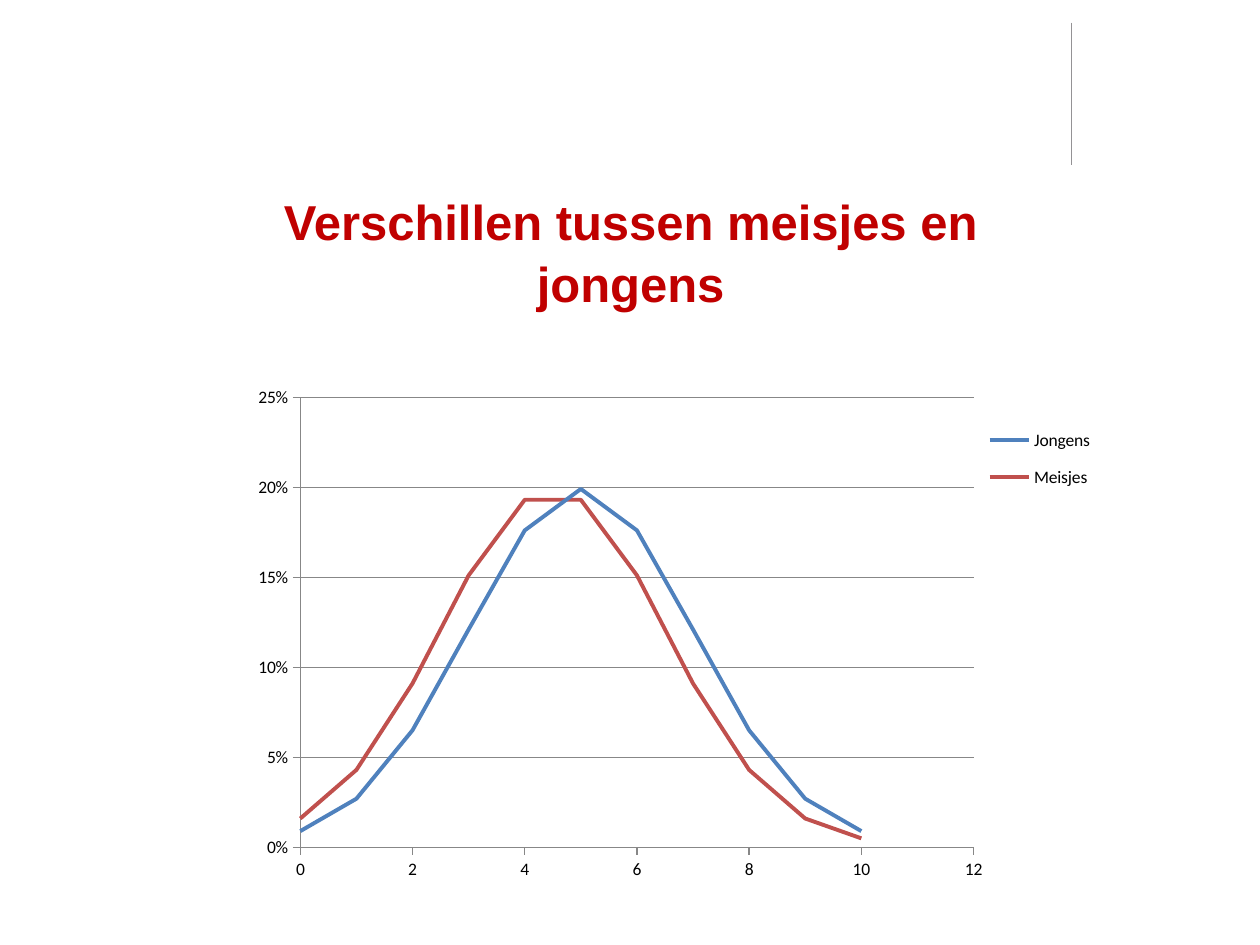
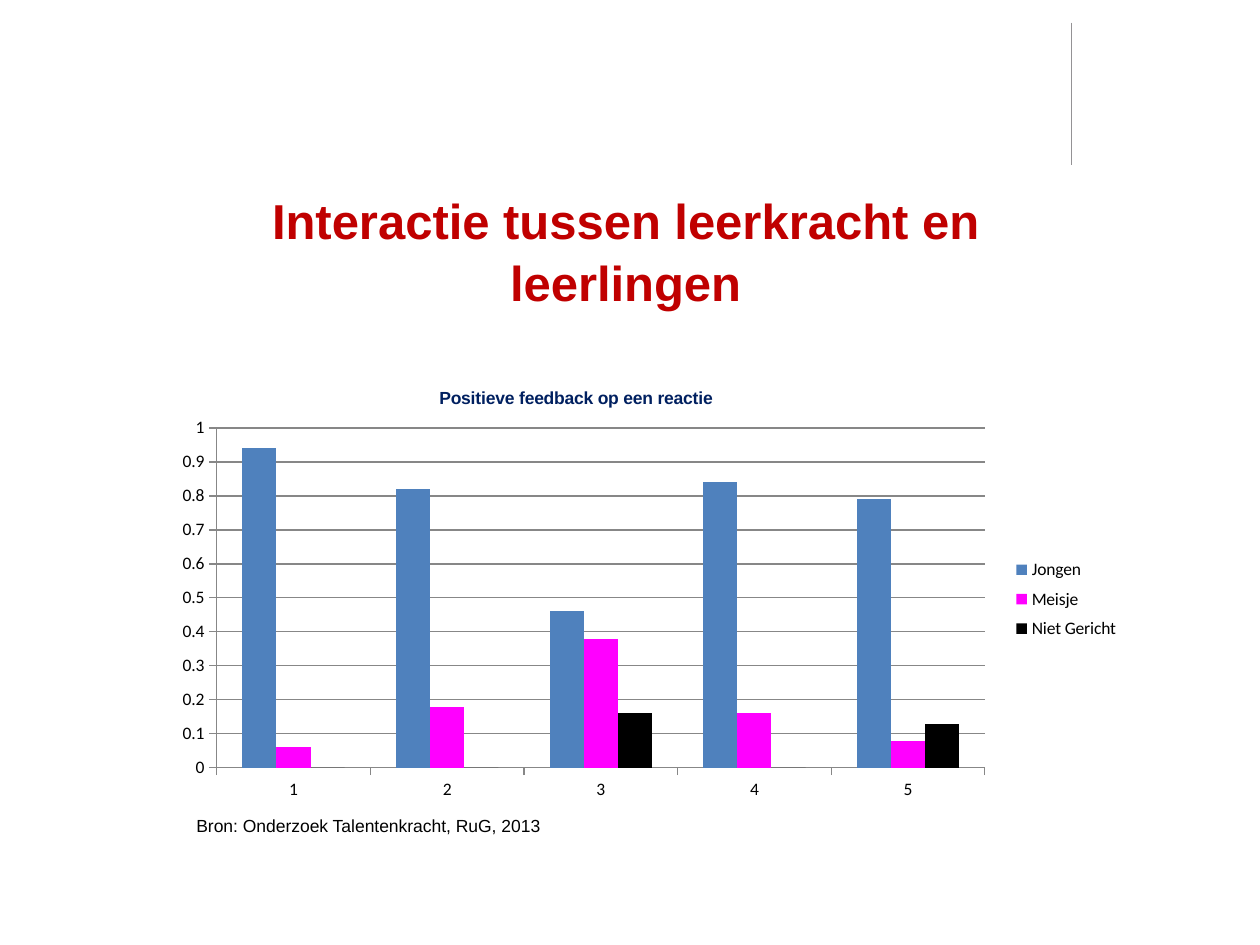
"""Builds two slides on differences between girls and boys, each with a chart."""
from lxml import etree
from pptx import Presentation
from pptx.chart.data import CategoryChartData, XyChartData
from pptx.dml.color import RGBColor
from pptx.enum.chart import XL_CHART_TYPE, XL_LEGEND_POSITION, XL_TICK_MARK
from pptx.enum.shapes import MSO_CONNECTOR
from pptx.enum.text import MSO_ANCHOR, PP_ALIGN
from pptx.oxml.ns import qn
from pptx.util import Inches, Pt

SMOOTH = XL_CHART_TYPE.XY_SCATTER_SMOOTH_NO_MARKERS
COLUMNS = XL_CHART_TYPE.COLUMN_CLUSTERED
RIGHT = XL_LEGEND_POSITION.RIGHT
TICK, NO_TICK = XL_TICK_MARK.OUTSIDE, XL_TICK_MARK.NONE
STRAIGHT = MSO_CONNECTOR.STRAIGHT
LEFT, CENTER = PP_ALIGN.LEFT, PP_ALIGN.CENTER
TOP, MIDDLE = MSO_ANCHOR.TOP, MSO_ANCHOR.MIDDLE

RED, NAVY, BLACK, RULE, GRID = "C00000", "002060", "000000", "949295", "878787"
BLUE, BRICK, PINK = "4F81BD", "C0504D", "FF00FF"

SLIDES = [
    {
        "title": "Verschillen tussen meisjes en jongens",
        "title_box": (1.46, 1.55, 7.09, 0.87),
        "kind": SMOOTH,
        "box": (1.61, 2.96, 7.3, 4.02),
        "plot": (0.106, 0.048, 0.732, 0.891),
        "legend": (0.83, 0.08, 0.16, 0.18),
        "cats": range(11),
        "top": 0.25, "step": 0.05, "format": "0%",
        "series": [
            ("Jongens", BLUE, [0.009, 0.027, 0.065, 0.121, 0.176, 0.199,
                               0.176, 0.121, 0.065, 0.027, 0.009]),
            ("Meisjes", BRICK, [0.016, 0.043, 0.091, 0.151, 0.193, 0.193,
                                0.151, 0.091, 0.043, 0.016, 0.005]),
        ],
    },
    {
        "title": "Interactie tussen leerkracht en leerlingen",
        "title_box": (1.46, 1.47, 7.01, 1.02),
        "kind": COLUMNS,
        "box": (1.3, 2.88, 7.64, 3.54),
        "plot": (0.055, 0.146, 0.798, 0.762),
        "legend": (0.875, 0.42, 0.125, 0.22),
        "cats": ["1", "2", "3", "4", "5"],
        "top": 1, "step": 0.1, "format": "General",
        "series": [
            ("Jongen", BLUE, [0.94, 0.82, 0.46, 0.84, 0.79]),
            ("Meisje", PINK, [0.06, 0.18, 0.38, 0.16, 0.08]),
            ("Niet Gericht", BLACK, [0, 0, 0.16, 0, 0.13]),
        ],
        "heading": "Positieve feedback op een reactie",
        "heading_at": (0.283, 0.045),
        "source": "Bron: Onderzoek Talentenkracht, RuG, 2013",
        "source_box": (1.46, 6.42, 2.99, 0.27),
    },
]


def color(code):
    return RGBColor.from_string(code)


def style(font, size=10, ink=BLACK, bold=False, face="Arial"):
    font.name, font.size, font.bold = face, Pt(size), bold
    font.color.rgb = color(ink)


def add_text(slide, text, box, align=LEFT, anchor=TOP, space=1.0, **look):
    frame = slide.shapes.add_textbox(*map(Inches, box)).text_frame
    frame.word_wrap, frame.vertical_anchor = True, anchor
    para = frame.paragraphs[0]
    para.alignment, para.line_spacing = align, space
    run = para.add_run()
    run.text = text
    style(run.font, **look)


def add_rule(slide):
    rule = slide.shapes.add_connector(
        STRAIGHT, Inches(8.5), Inches(0.18), Inches(8.5), Inches(1.31))
    rule.line.color.rgb, rule.line.width = color(RULE), Pt(0.5)
    etree.SubElement(rule._element.spPr, qn("a:effectLst"))


def place(node, spot, index, inner=False):
    for old in node.findall(qn("c:layout")):
        node.remove(old)
    layout = etree.Element(qn("c:layout"))
    manual = etree.SubElement(layout, qn("c:manualLayout"))
    parts = [("layoutTarget", "inner")] if inner else []
    parts += [("xMode", "edge"), ("yMode", "edge"), *zip("xywh", spot)]
    for tag, val in parts:
        etree.SubElement(manual, qn("c:" + tag)).set("val", str(val))
    node.insert(index, layout)


def chart_data(item):
    if item["kind"] == COLUMNS:
        data = CategoryChartData()
        data.categories = item["cats"]
        for name, _, vals in item["series"]:
            data.add_series(name, vals)
        return data
    data = XyChartData()
    for name, _, vals in item["series"]:
        line = data.add_series(name)
        for x, y in zip(item["cats"], vals):
            line.add_data_point(x, y)
    return data


def style_axes(chart, item):
    across, up = chart.category_axis, chart.value_axis
    for axis in (across, up):
        axis.major_tick_mark, axis.minor_tick_mark = TICK, NO_TICK
        axis.format.line.color.rgb = color(GRID)
        axis.format.line.width = Pt(0.75)
    across.has_major_gridlines = False
    up.has_major_gridlines = True
    up.major_gridlines.format.line.color.rgb = color(GRID)
    up.major_gridlines.format.line.width = Pt(0.75)
    up.minimum_scale, up.maximum_scale = 0, item["top"]
    up.major_unit = item["step"]
    up.tick_labels.number_format = item["format"]
    up.tick_labels.number_format_is_linked = False
    if item["kind"] == SMOOTH:
        across.minimum_scale, across.maximum_scale = 0, 12
        across.major_unit = 2


def add_chart(slide, item):
    chart = slide.shapes.add_chart(
        item["kind"], *map(Inches, item["box"]), chart_data(item)).chart
    style(chart.font, face="Calibri")
    style_axes(chart, item)
    plot = chart.plots[0]
    plot.vary_by_categories = False
    if item["kind"] == COLUMNS:
        plot.gap_width, plot.overlap = 150, 0
    for series, (_, ink, _) in zip(plot.series, item["series"]):
        if item["kind"] == COLUMNS:
            series.format.fill.solid()
            series.format.fill.fore_color.rgb = color(ink)
        else:
            series.smooth = True
            series.format.line.color.rgb = color(ink)
            series.format.line.width = Pt(2.25)
    chart.has_legend = True
    chart.legend.position = RIGHT
    chart.legend.include_in_layout = False
    place(chart.legend._element, item["legend"], 1)
    place(chart._chartSpace.chart.plotArea, item["plot"], 0, inner=True)
    chart.has_title = "heading" in item
    if chart.has_title:
        run = chart.chart_title.text_frame.paragraphs[0].add_run()
        run.text = item["heading"]
        style(run.font, ink=NAVY, bold=True)
        place(chart.chart_title._element, item["heading_at"], 1)


def main():
    deck = Presentation()
    deck.slide_width, deck.slide_height = Inches(10), Inches(7.5)
    for item in SLIDES:
        slide = deck.slides.add_slide(deck.slide_layouts[6])
        add_rule(slide)
        add_text(slide, item["title"], item["title_box"], align=CENTER,
                 anchor=MIDDLE, space=1.05, size=28, ink=RED, bold=True)
        add_chart(slide, item)
        if "source" in item:
            add_text(slide, item["source"], item["source_box"])
    deck.save("out.pptx")


if __name__ == "__main__":
    main()
